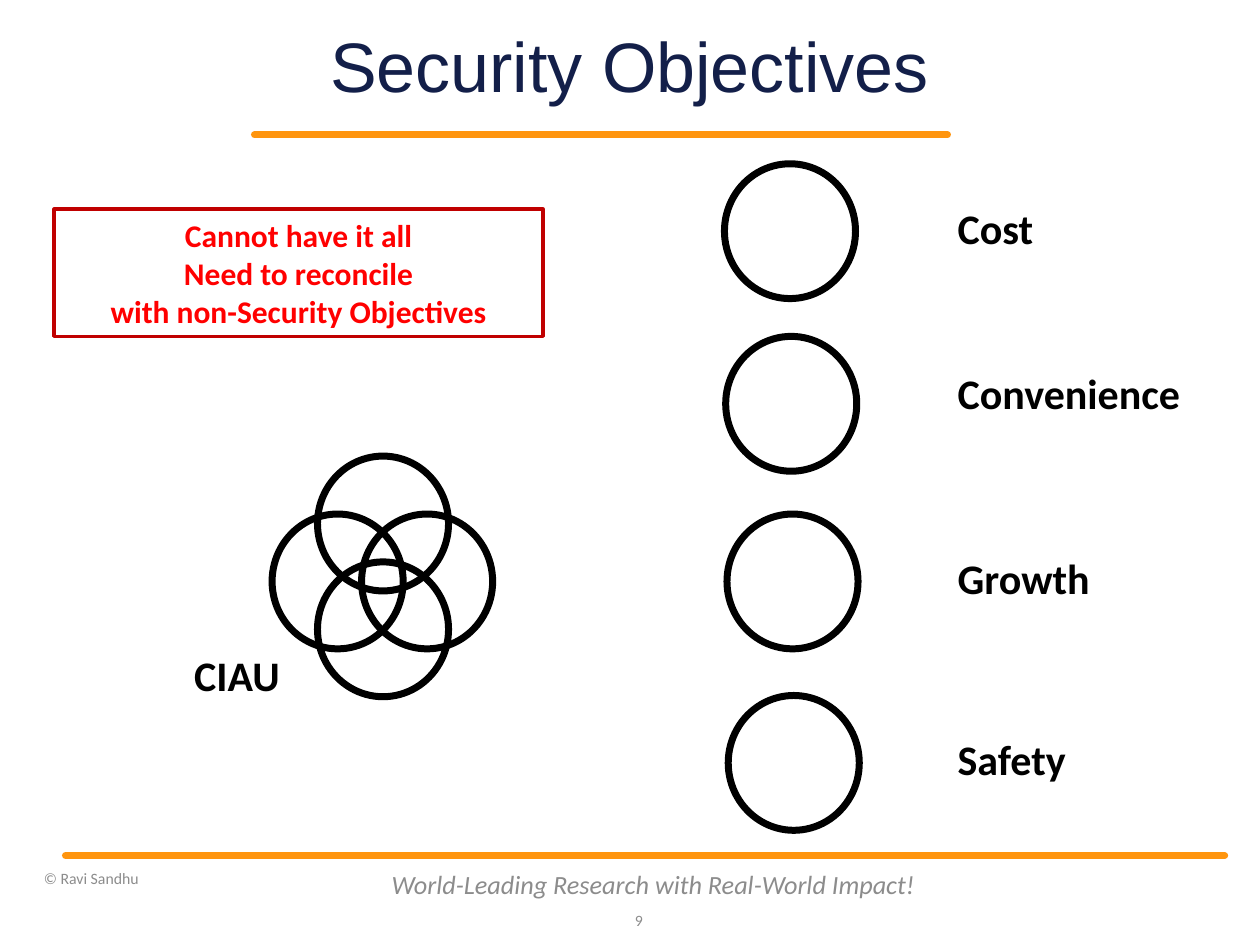
from lxml import etree
from pptx import Presentation
from pptx import util as u
from pptx.dml.color import RGBColor
from pptx.enum import shapes, text
from pptx.oxml import ns

Inches = u.Inches
ORANGE = RGBColor(0xFF, 0x95, 0x0E)
NAVY = RGBColor(0x13, 0x1F, 0x49)
GRAY = RGBColor(0x8C, 0x8C, 0x8C)
RED = RGBColor(0xFF, 0, 0)
DARK_RED = RGBColor(0xC0, 0, 0)
BLACK = RGBColor(0, 0, 0)
LEFT, MID, RIGHT = text.PP_ALIGN.LEFT, text.PP_ALIGN.CENTER, text.PP_ALIGN.RIGHT
RING_W, RING_H = 1.04, 1.07


def write(shape, words, size, color, align=LEFT, face="Calibri", bold=False,
          slant=False, pad=(0.1, 0.05), space=None, wrap=True,
          anchor=text.MSO_ANCHOR.MIDDLE):
    frame = shape.text_frame
    frame.text = words
    frame.word_wrap = wrap
    frame.vertical_anchor = anchor
    frame.margin_left = frame.margin_right = Inches(pad[0])
    frame.margin_top = frame.margin_bottom = Inches(pad[1])
    for para in frame.paragraphs:
        para.alignment = align
        if space:
            para.line_spacing = space
        for run in para.runs:
            font = run.font
            font.name, font.size = face, u.Pt(size)
            font.bold, font.italic = bold, slant
            font.color.rgb = color


def add_text(slide, box, words, size, color, **style):
    shape = slide.shapes.add_textbox(*map(Inches, box))
    write(shape, words, size, color, **style)


def add_label(slide, box, words, align=LEFT):
    add_text(slide, box, words, 24, BLACK, align=align, bold=True,
             pad=(0.07, 0.03), space=0.87, wrap=False,
             anchor=text.MSO_ANCHOR.TOP)


def add_frame(slide, kind, box, color, width):
    """Add an unfilled outline shape."""
    shape = slide.shapes.add_shape(kind, *map(Inches, box))
    shape.shadow.inherit = False
    shape.fill.background()
    shape.line.color.rgb = color
    shape.line.width = u.Pt(width)
    return shape


def add_ring(slide, left, top):
    add_frame(slide, shapes.MSO_SHAPE.OVAL, (left, top, RING_W, RING_H), BLACK, 4)


def add_rule(slide, left, right, top):
    rule = slide.shapes.add_connector(
        shapes.MSO_CONNECTOR.STRAIGHT, *map(Inches, (left, top, right, top)))
    rule.line.color.rgb = ORANGE
    rule.line.width = u.Pt(4)
    rule.line._get_or_add_ln().set("cap", "rnd")
    etree.SubElement(rule._element.spPr, ns.qn("a:effectLst"))


def add_head(slide, left, top):
    add_rule(slide, left, left + 5.5, top + 0.77)
    add_text(slide, (left + 0.35, top, 5.25, 0.51), "Security Objectives", 40,
             NAVY, align=MID, face="Arial", pad=(0, 0), space=0.9)


def add_note(slide, box):
    note = add_frame(slide, shapes.MSO_SHAPE.RECTANGLE, box, DARK_RED, 2)
    lines = ("Cannot have it all", "Need to reconcile",
             "with non-Security Objectives")
    write(note, "\n".join(lines), 18, RED, align=MID, bold=True)


def add_venn(slide, left, top):
    """Four crossing rings, with their label at the lower left."""
    for x, y in ((0.71, 0.46), (0, 0.46), (0.36, 0.84), (0.36, 0)):
        add_ring(slide, left + x, top + y)
    add_label(slide, (left - 0.69, top + 1.56, 0.82, 0.41), "CIAU", MID)


def add_goals(slide, left, top):
    """Column of rings, each with a label to its right."""
    goals = (("Cost", 0, 0.33, 0.89), ("Convenience", 1.37, 1.64, 2.23),
             ("Growth", 2.78, 3.11, 1.31), ("Safety", 4.22, 4.55, 1.15))
    for i, (name, ring, label, width) in enumerate(goals):
        add_ring(slide, left + 0.01 * i, top + ring)
        add_label(slide, (left + 1.78, top + label, width, 0.41), name)


def add_foot(slide, left, top):
    add_rule(slide, left + 0.27, left + 9.47, top)
    add_text(slide, (left, top, 2.75, 0.36), "© Ravi Sandhu", 9, GRAY)
    add_text(slide, (left + 2.75, top + 0.03, 4.37, 0.4),
             "World-Leading Research with Real-World Impact!", 15, GRAY,
             align=MID, slant=True)
    add_text(slide, (left + 4.55, top + 0.31, 0.4, 0.4), "9", 9, GRAY,
             align=RIGHT)


def main():
    deck = Presentation()
    deck.slide_width, deck.slide_height = Inches(10), Inches(7.5)
    slide = deck.slides.add_slide(deck.slide_layouts[6])
    add_head(slide, 2.02, 0.3)
    add_note(slide, (0.43, 1.66, 3.88, 1.01))
    add_venn(slide, 2.16, 3.62)
    add_goals(slide, 5.75, 1.3)
    add_foot(slide, 0.25, 6.79)
    deck.save("out.pptx")


if __name__ == "__main__":
    main()
